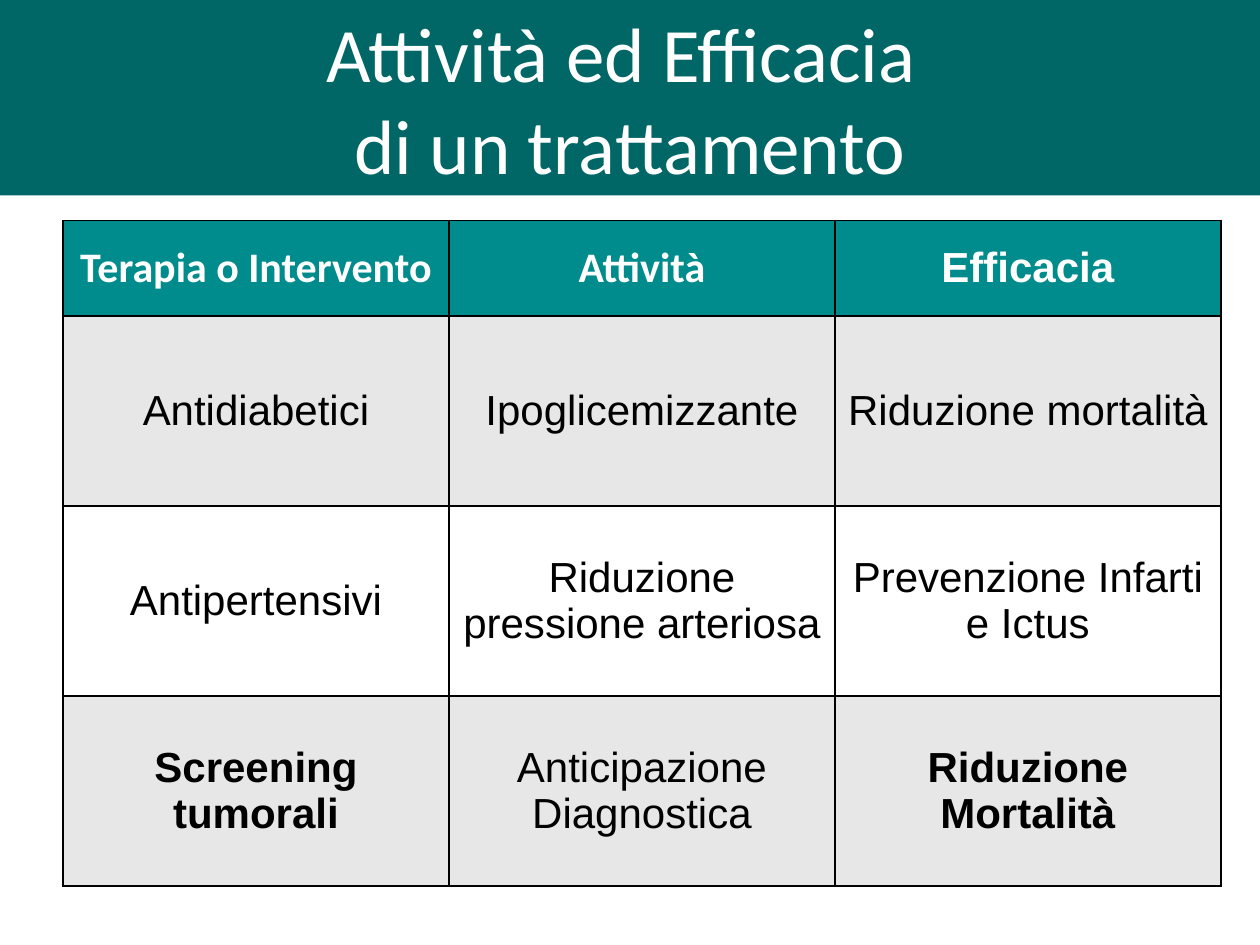
from lxml.etree import SubElement
from pptx import Presentation
from pptx.dml.color import RGBColor
from pptx.enum.shapes import MSO_SHAPE as Shape
from pptx.enum.text import MSO_ANCHOR as Anchor, PP_ALIGN as Align
from pptx.oxml.ns import qn
from pptx.util import Cm, Pt

TITLE = ["Attività ed Efficacia ", "di un trattamento"]
HEADERS = [("Terapia o Intervento", "Calibri"), ("Attività", "Calibri"), ("Efficacia", "Arial")]
TREATMENTS = [
    ["Antidiabetici", "Ipoglicemizzante", "Riduzione mortalità"],
    ["Antipertensivi", "Riduzione pressione arteriosa", "Prevenzione Infarti\ne Ictus"],
    ["Screening tumorali", "Anticipazione\nDiagnostica", "Riduzione Mortalità"],
]
BOLD_ENTRIES = {"Screening tumorali", "Riduzione Mortalità"}

BANNER, HEADER, BAND = "006666", "008C8C", "E7E7E7"
WHITE, BLACK = "FFFFFF", "000000"
COLUMN_WIDTH, HEADER_HEIGHT, ROW_HEIGHT = Cm(7.78), Cm(1.93), Cm(3.83)


def paint(fill, color):
    fill.solid()
    fill.fore_color.rgb = RGBColor.from_string(color)


def add_run(paragraph, text, size, font, color, bold=False):
    run = paragraph.add_run()
    run.text = text
    run.font.size, run.font.name, run.font.bold = Pt(size), font, bold
    run.font.color.rgb = RGBColor.from_string(color)


def add_borders(cell):
    properties = cell._tc.get_or_add_tcPr()
    for position, side in enumerate(("lnL", "lnR", "lnT", "lnB")):
        line = SubElement(properties, qn(f"a:{side}"), w=str(Pt(1)))
        solid = SubElement(line, qn("a:solidFill"))
        SubElement(solid, qn("a:srgbClr"), val=BLACK)
        properties.insert(position, line)  # borders precede the fill


def fill_cell(cell, text, font, color, bold, background):
    paint(cell.fill, background)
    add_borders(cell)
    cell.vertical_anchor = Anchor.MIDDLE
    cell.margin_left = cell.margin_right = Cm(0.18)
    cell.margin_top = cell.margin_bottom = 0
    frame = cell.text_frame
    for index, line in enumerate(text.split("\n")):
        paragraph = frame.add_paragraph() if index else frame.paragraphs[0]
        paragraph.alignment = Align.CENTER
        add_run(paragraph, line, 24, font, color, bold)


def add_banner(slide, width):
    banner = slide.shapes.add_shape(Shape.RECTANGLE, 0, 0, width, Cm(3.94))
    banner.shadow.inherit = False
    paint(banner.fill, BANNER)
    banner.line.fill.background()
    frame = banner.text_frame
    frame.word_wrap = True
    frame.vertical_anchor = Anchor.MIDDLE
    heading = frame.paragraphs[0]
    heading.alignment = Align.CENTER
    for index, line in enumerate(TITLE):
        if index:
            heading.add_line_break()
        add_run(heading, line, 44, "Calibri", WHITE)


def add_comparison(slide):
    columns, body_rows = len(HEADERS), len(TREATMENTS)
    comparison = slide.shapes.add_table(
        body_rows + 1, columns, Cm(1.27), Cm(4.44),
        COLUMN_WIDTH * columns, HEADER_HEIGHT + ROW_HEIGHT * body_rows).table
    for column in comparison.columns:
        column.width = COLUMN_WIDTH
    for index, row in enumerate(comparison.rows):
        row.height = ROW_HEIGHT if index else HEADER_HEIGHT
    for column, (label, font) in enumerate(HEADERS):
        fill_cell(comparison.cell(0, column), label, font, WHITE, True, HEADER)
    for row, entries in enumerate(TREATMENTS, 1):
        background = BAND if row % 2 else WHITE
        for column, entry in enumerate(entries):
            fill_cell(comparison.cell(row, column), entry, "Arial", BLACK,
                      entry in BOLD_ENTRIES, background)


def main():
    deck = Presentation()
    deck.slide_width, deck.slide_height = Cm(25.4), Cm(19.05)
    slide = deck.slides.add_slide(deck.slide_layouts[6])
    add_banner(slide, deck.slide_width)
    add_comparison(slide)
    deck.save("out.pptx")


if __name__ == "__main__":
    main()
